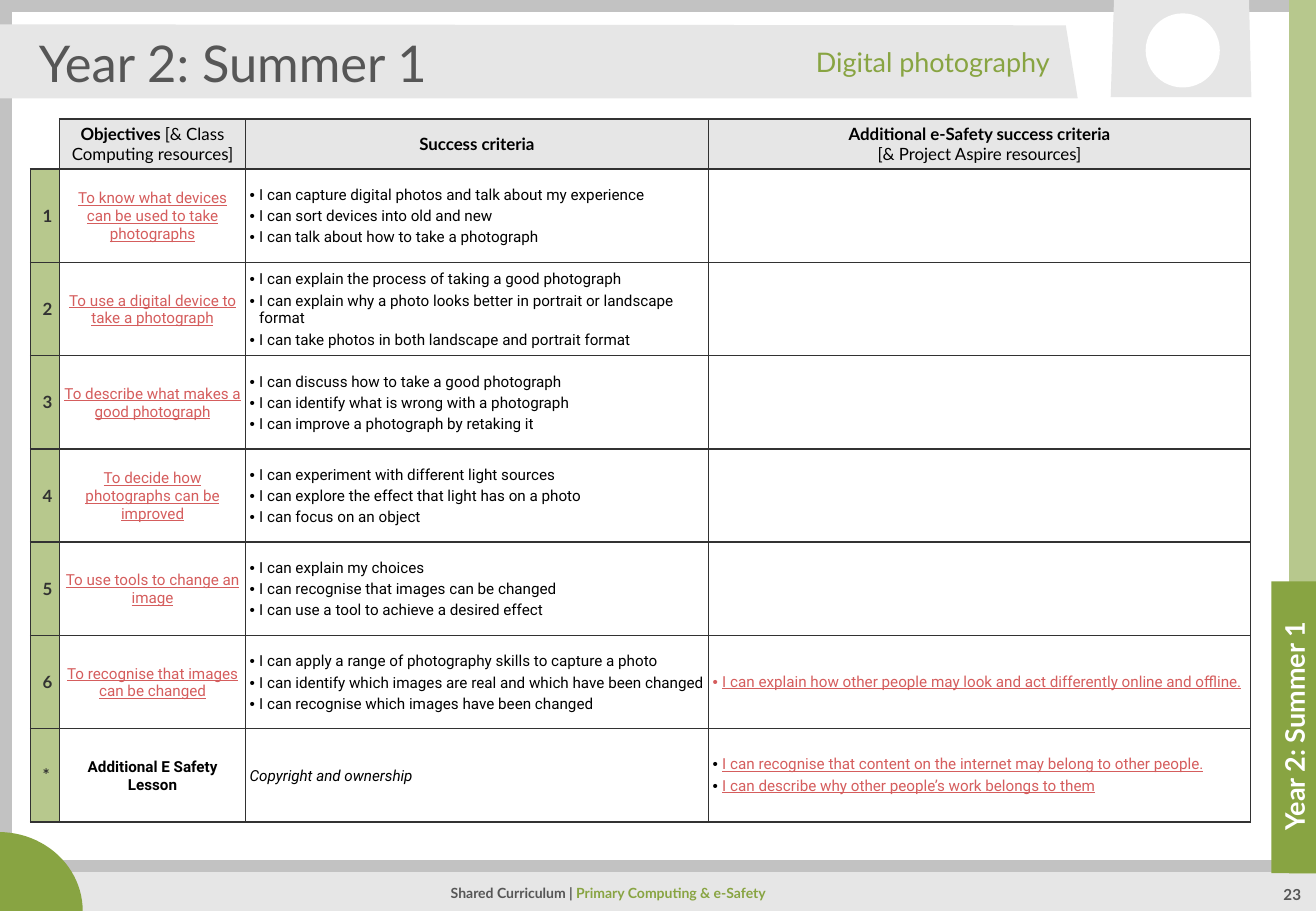
from lxml import etree
from pptx import Presentation
from pptx.dml.color import RGBColor
from pptx.enum import shapes, text
from pptx.oxml import ns
from pptx.util import Cm, Pt

GREEN, DARK, LINK = "88A442", "565656", "D55D5D"
PALE, GREY, INK, BLACK, WHITE = "E6E6E6", "C2C2C2", "323232", "000000", "FFFFFF"

TERM = "Year 2: Summer 1"
TOPIC = "Digital photography"
FOOTER = [("Shared Curriculum | ", {}), ("Primary Computing & e-Safety", {"color": GREEN})]
PAGE = "23"

HEADINGS = [
    [[("Objectives ", {}), ("[& Class Computing resources]", {"bold": False})]],
    ["Success criteria"],
    ["Additional e-Safety success criteria", [("[& Project Aspire resources]", {"bold": False})]],
]
LESSONS = [
    ("1", "To know what devices can be used to take photographs",
     ["I can capture digital photos and talk about my experience",
      "I can sort devices into old and new",
      "I can talk about how to take a photograph"], []),
    ("2", "To use a digital device to take a photograph",
     ["I can explain the process of taking a good photograph",
      "I can explain why a photo looks better in portrait or landscape format",
      "I can take photos in both landscape and portrait format"], []),
    ("3", "To describe what makes a good photograph",
     ["I can discuss how to take a good photograph",
      "I can identify what is wrong with a photograph",
      "I can improve a photograph by retaking it"], []),
    ("4", "To decide how photographs can be improved",
     ["I can experiment with different light sources",
      "I can explore the effect that light has on a photo",
      "I can focus on an object"], []),
    ("5", "To use tools to change an image",
     ["I can explain my choices",
      "I can recognise that images can be changed",
      "I can use a tool to achieve a desired effect"], []),
    ("6", "To recognise that images can be changed",
     ["I can apply a range of photography skills to capture a photo",
      "I can identify which images are real and which have been changed",
      "I can recognise which images have been changed"],
     ["I can explain how other people may look and act differently online and offline."]),
    ("*", "Additional E Safety Lesson", ["Copyright and ownership"],
     ["I can recognise that content on the internet may belong to other people.",
      "I can describe why other people’s work belongs to them"]),
]
COLUMNS = [0.6, 3.88, 9.68, 11.33]
HEADER_HEIGHT, LESSON_HEIGHT = 1.04, 1.95

FRAME = [[(0, 0), (27.56, 0), (27.56, 19.05), (0, 19.05)],
         [(0.25, 0.25), (0.25, 18.82), (27.25, 18.82), (27.25, 0.25)]]
BANNER = [[(-0.05, 0.51), (-0.03, 2.06), (22.53, 2.06), (22.28, 0.53)]]
CAMERA = [[(23.22, 2.03), (26.16, 2.03), (26.11, -0.03), (23.29, -0.05)]]

LEFT, CENTER, RIGHT = text.PP_ALIGN.LEFT, text.PP_ALIGN.CENTER, text.PP_ALIGN.RIGHT
MIDDLE, TOP = text.MSO_ANCHOR.MIDDLE, text.MSO_ANCHOR.TOP


def rgb(color):
    return RGBColor.from_string(color)


def add_xml(parent, tag, **attributes):
    return etree.SubElement(parent, ns.qn(tag), attributes)


def paint(fill, color, alpha=None):
    fill.solid()
    fill.fore_color.rgb = rgb(color)
    if alpha:
        add_xml(fill._xPr.find(ns.qn("a:solidFill"))[0], "a:alpha", val=str(alpha * 1000))


def write(frame, paragraphs, size=9, font="Lato", color=DARK, bold=False, italic=False,
          underline=False, align=LEFT, after=0, spacing=1.0, bullet=None):
    for index, content in enumerate(paragraphs):
        paragraph = frame.paragraphs[0] if index == 0 else frame.add_paragraph()
        paragraph.alignment = align
        paragraph.space_before, paragraph.space_after = Pt(0), Pt(after)
        paragraph.line_spacing = spacing
        properties = paragraph._p.get_or_add_pPr()
        indent = Cm(0.2) if bullet else 0
        properties.set("marL", str(indent))
        properties.set("indent", str(-indent))
        if bullet:
            add_xml(add_xml(properties, "a:buClr"), "a:srgbClr", val=bullet)
            add_xml(properties, "a:buFont", typeface="Arial")
            add_xml(properties, "a:buChar", char="•")
        else:
            add_xml(properties, "a:buNone")
        for words, changes in [(content, {})] if isinstance(content, str) else content:
            run = paragraph.add_run()
            run.text = words
            run.font.name, run.font.size = font, Pt(size)
            run.font.bold = changes.get("bold", bold)
            run.font.italic, run.font.underline = italic, underline
            run.font.color.rgb = rgb(changes.get("color", color))


def finish(shape, color, alpha=None):
    paint(shape.fill, color, alpha)
    shape.line.fill.background()
    shape.shadow.inherit = False


def add_block(slide, kind, box, color, alpha=None):
    finish(slide.shapes.add_shape(kind, *map(Cm, box)), color, alpha)


def add_outline(slide, contours, color):
    builder = None
    for contour in contours:
        points = [(Cm(x), Cm(y)) for x, y in contour]
        if builder is None:
            builder = slide.shapes.build_freeform(*points[0])
        else:
            builder.move_to(*points[0])
        builder.add_line_segments(points[1:], close=True)
    finish(builder.convert_to_shape(), color)


def set_frame(frame, anchor=MIDDLE):
    frame.word_wrap = True
    frame.auto_size = text.MSO_AUTO_SIZE.NONE
    frame.vertical_anchor = anchor


def add_label(slide, box, paragraphs, anchor=MIDDLE, **style):
    frame = slide.shapes.add_textbox(*map(Cm, box)).text_frame
    set_frame(frame, anchor)
    write(frame, paragraphs, **style)


def fill_placeholder(slide, placeholder, box, words, **style):
    slide.shapes.element.append(placeholder.element)
    placeholder.left, placeholder.top, placeholder.width, placeholder.height = map(Cm, box)
    set_frame(placeholder.text_frame)
    write(placeholder.text_frame, [words], **style)


def set_borders(cell, sides):
    for index, side in enumerate(sides):
        line = etree.Element(ns.qn("a:ln" + side), {"w": str(Pt(1))})
        add_xml(add_xml(line, "a:solidFill"), "a:srgbClr", val=INK)
        cell._tc.get_or_add_tcPr().insert(index, line)


def fill_cell(cell, paragraphs, background=WHITE, alpha=None, side=0.09, top=0.03, bottom=0, **style):
    cell.vertical_anchor = MIDDLE
    cell.margin_left = cell.margin_right = Cm(side)
    cell.margin_top, cell.margin_bottom = Cm(top), Cm(bottom)
    paint(cell.fill, background, alpha)
    set_borders(cell, "LRTB")
    write(cell.text_frame, paragraphs, **style)


def add_lessons(slide):
    heights = [HEADER_HEIGHT] + [LESSON_HEIGHT] * len(LESSONS)
    table = slide.shapes.add_table(len(heights), len(COLUMNS), Cm(0.64), Cm(2.49),
                                   Cm(sum(COLUMNS)), Cm(sum(heights))).table
    table.first_row = table.horz_banding = False
    for column, width in zip(table.columns, COLUMNS):
        column.width = Cm(width)
    for row, height in zip(table.rows, heights):
        row.height = Cm(height)

    corner = table.cell(0, 0)
    corner.margin_top = corner.margin_bottom = Cm(0.1)
    corner.fill.background()
    set_borders(corner, "RB")
    for column, heading in enumerate(HEADINGS, 1):
        fill_cell(table.cell(0, column), heading, PALE, top=0.1, bottom=0.1,
                  size=10, color=BLACK, bold=True, align=CENTER)

    for row, (number, objective, criteria, safety) in enumerate(LESSONS, 1):
        extra = number == "*"
        body = {"font": "Roboto", "after": 2}
        fill_cell(table.cell(row, 0), [number], GREEN, 60, side=0.25, top=0.13, bottom=0.13,
                  size=10, color=INK, bold=True, align=CENTER)
        fill_cell(table.cell(row, 1), [objective], color=BLACK if extra else LINK,
                  bold=extra, underline=not extra, align=CENTER, **body)
        fill_cell(table.cell(row, 2), criteria, color=BLACK, italic=extra,
                  bullet=None if extra else BLACK, **body)
        fill_cell(table.cell(row, 3), safety, top=0.1, bottom=0.1, color=LINK, underline=True,
                  bullet=BLACK if extra else LINK, **body)


def main():
    presentation = Presentation()
    presentation.slide_width, presentation.slide_height = Cm(27.51), Cm(19.05)
    slide = presentation.slides.add_slide(presentation.slide_layouts[1])
    title, side_title = slide.placeholders
    kinds = shapes.MSO_SHAPE

    add_outline(slide, FRAME, GREY)
    add_block(slide, kinds.RECTANGLE, (0.81, 18.24, 26.75, 0.84), PALE)
    rule = slide.shapes.add_connector(shapes.MSO_CONNECTOR.STRAIGHT,
                                      Cm(0.13), Cm(18.11), Cm(27.51), Cm(18.11))
    rule.line.color.rgb, rule.line.width = rgb(GREY), Pt(7)
    add_xml(rule.element.spPr, "a:effectLst")
    add_block(slide, kinds.ARC, (-1.78, 17.4, 3.51, 3.3), GREEN)
    add_label(slide, (5.21, 18.31, 15.01, 0.76), [FOOTER], size=8.3, bold=True, align=CENTER, spacing=0.9)
    add_outline(slide, BANNER, PALE)
    for color, alpha in ((WHITE, None), (GREEN, 60)):
        add_block(slide, kinds.RECTANGLE, (26.95, -0.02, 0.61, 18.29), color, alpha)
    add_block(slide, kinds.RECTANGLE, (26.58, 12.16, 0.99, 6.1), GREEN)
    add_label(slide, (26.2, 18.31, 1.63, 0.71), [PAGE], TOP, bold=True, align=CENTER, spacing=1.2)
    add_outline(slide, CAMERA, PALE)
    add_block(slide, kinds.OVAL, (23.95, 0.28, 1.55, 1.55), WHITE)

    fill_placeholder(slide, title, (0.56, 0.66, 21.39, 1.27), TERM, size=30)
    fill_placeholder(slide, side_title, (24.03, 14.76, 6.05, 0.86), TERM,
                     size=16, color=WHITE, bold=True, align=CENTER)
    side_title.rotation = 270
    add_label(slide, (9.47, 0.66, 12.73, 1.27), [TOPIC], size=16, color=GREEN, align=RIGHT)
    add_lessons(slide)
    presentation.save("out.pptx")


if __name__ == "__main__":
    main()
